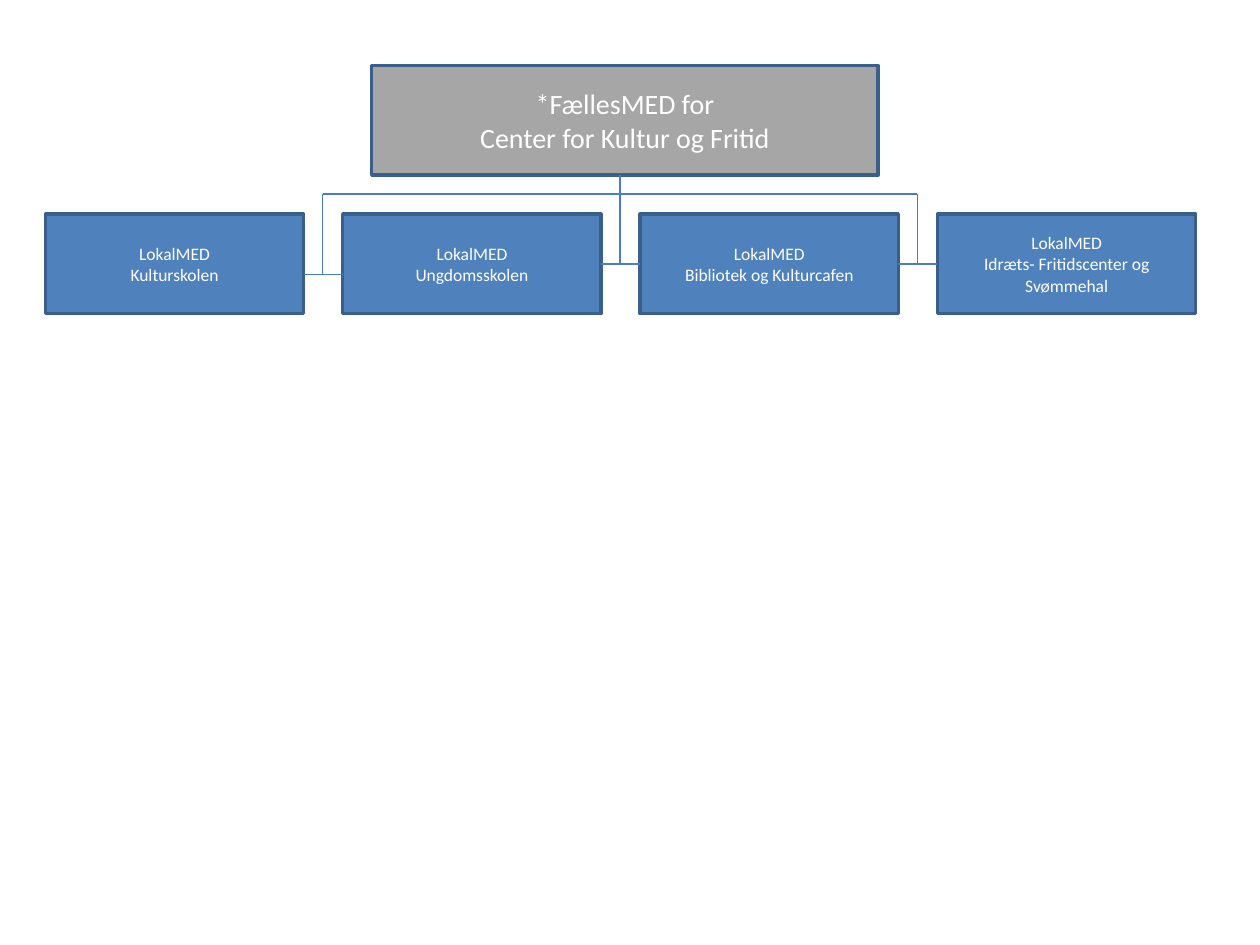
import dataclasses

import pptx
import pptx.dml.color
import pptx.enum.shapes
import pptx.enum.text
import pptx.oxml.ns
import pptx.util
from lxml import etree

PX = 9144  # EMU per px, 100 px to the inch
RIGHT, LEFT = 3, 1  # connection sites of a rectangle


@dataclasses.dataclass(frozen=True)
class Theme:
    font: str = "Calibri"
    parent_size: int = 16
    unit_size: int = 10
    text: str = "FFFFFF"
    parent_fill: str = "A6A6A6"
    unit_fill: str = "4F81BD"
    border: str = "3A5F8C"
    border_width: float = 2
    link: str = "4B7EBC"
    link_width: float = 0.75


THEME = Theme()
PARENT = ["*FællesMED for", "Center for Kultur og Fritid"]
UNITS = ["Kulturskolen", "Ungdomsskolen", "Bibliotek og Kulturcafen",
         "Idræts- Fritidscenter og Svømmehal"]


def rgb(value):
    return pptx.dml.color.RGBColor.from_string(value)


def add_box(page, box, lines, fill, size):
    left, top, width, height = (value * PX for value in box)
    shape = page.shapes.add_shape(
        pptx.enum.shapes.MSO_SHAPE.RECTANGLE, left, top, width, height)
    shape.shadow.inherit = False
    shape.fill.solid()
    shape.fill.fore_color.rgb = rgb(fill)
    shape.line.color.rgb = rgb(THEME.border)
    shape.line.width = pptx.util.Pt(THEME.border_width)
    frame = shape.text_frame
    frame.word_wrap = True
    frame.vertical_anchor = pptx.enum.text.MSO_ANCHOR.MIDDLE
    frame.text = "\n".join(lines)
    for para in frame.paragraphs:
        para.alignment = pptx.enum.text.PP_ALIGN.CENTER
        for span in para.runs:
            span.font.name = THEME.font
            span.font.size = pptx.util.Pt(size)
            span.font.color.rgb = rgb(THEME.text)
    return shape


def add_link(page, x1, y1, x2, y2):
    link = page.shapes.add_connector(
        pptx.enum.shapes.MSO_CONNECTOR.STRAIGHT,
        x1 * PX, y1 * PX, x2 * PX, y2 * PX)
    link.line.color.rgb = rgb(THEME.link)
    link.line.width = pptx.util.Pt(THEME.link_width)
    etree.SubElement(link._element.spPr, pptx.oxml.ns.qn("a:effectLst"))
    return link


def add_organisation(page, box):
    left, top, width, height = box
    unit_width, unit_height, parent_height = 205, 79, 87
    pitch = (width - unit_width) // (len(UNITS) - 1)
    unit_top = top + height - unit_height
    parent_bottom = top + parent_height
    bus_y = (parent_bottom + unit_top) // 2
    middle_y = unit_top + unit_height // 2 + 1

    # Parent committee
    add_box(page, (left + 259, top, 402, parent_height), PARENT,
            THEME.parent_fill, THEME.parent_size)

    # Local committees
    unit_lefts = [left + index * pitch for index in range(len(UNITS))]
    units = [
        add_box(page, (unit_left, unit_top, unit_width, unit_height),
                ["LokalMED", name], THEME.unit_fill, THEME.unit_size)
        for unit_left, name in zip(unit_lefts, UNITS)]

    # Trunk and horizontal bus, with a drop into each gap
    gap = pitch - unit_width
    drops = [unit_left - (gap + 1) // 2 for unit_left in unit_lefts[1:]]
    add_link(page, drops[1], parent_bottom, drops[1], bus_y)
    add_link(page, drops[0], bus_y, drops[-1], bus_y)
    rung_ys = [middle_y + 8, middle_y, middle_y]
    for drop, rung_y in zip(drops, rung_ys):
        add_link(page, drop, bus_y, drop, rung_y)

    # Rungs between neighbouring units; the first hangs below the middle
    for index, rung_y in enumerate(rung_ys):
        rung = add_link(page, unit_lefts[index] + unit_width, rung_y,
                        unit_lefts[index + 1], rung_y)
        if rung_y == middle_y:
            rung.begin_connect(units[index], RIGHT)
            rung.end_connect(units[index + 1], LEFT)


def main():
    deck = pptx.Presentation()
    deck.slide_width, deck.slide_height = 1000 * PX, 750 * PX
    page = deck.slides.add_slide(deck.slide_layouts[6])
    add_organisation(page, (36, 52, 913, 197))
    deck.save("out.pptx")


if __name__ == "__main__":
    main()
